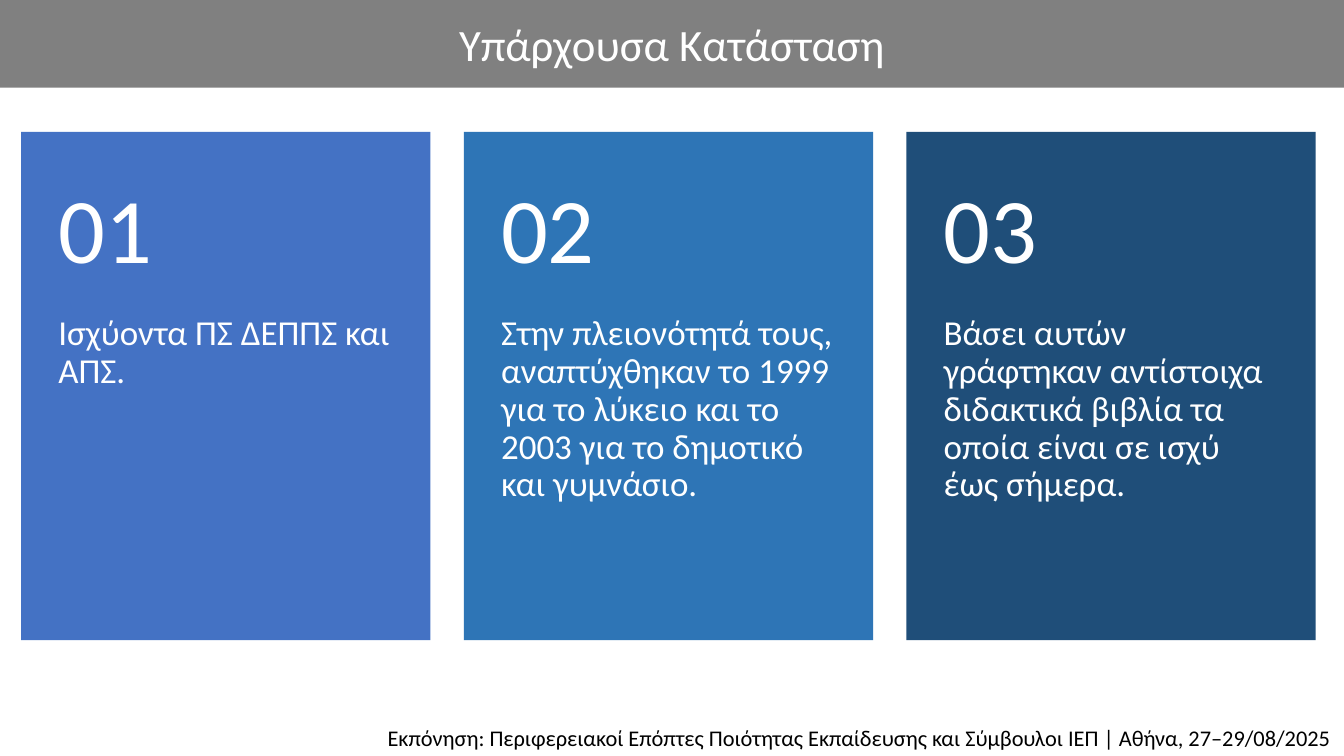
from dataclasses import dataclass

from pptx import Presentation
from pptx.dml.color import RGBColor
from pptx.enum.shapes import MSO_SHAPE as Shape
from pptx.enum.text import MSO_ANCHOR as Anchor, PP_ALIGN as Align
from pptx.util import Inches, Pt

WHITE = RGBColor(0xFF, 0xFF, 0xFF)
BLACK = RGBColor(0x00, 0x00, 0x00)
GREY = RGBColor(0x80, 0x80, 0x80)
INDIGO = RGBColor(0x44, 0x72, 0xC4)
BLUE = RGBColor(0x2E, 0x75, 0xB6)
NAVY = RGBColor(0x1F, 0x4E, 0x79)

# Card grid, in inches
LEFT, TOP, WIDTH, HEIGHT = 0.21, 1.31, 4.06, 5.04
PITCH = 4.39
HEAD = 2.02
SIDE = 0.37


@dataclass
class Box:
    left: float
    top: float
    width: float
    height: float
    text: str
    size: int
    fill: RGBColor | None = None
    color: RGBColor = WHITE
    align: Align = Align.LEFT
    anchor: Anchor = Anchor.TOP
    spacing: float = 1.0
    inset: tuple[float, float, float, float] = (0.1, 0.05, 0.1, 0.05)


@dataclass
class Card:
    text: str
    fill: RGBColor


CARDS = [
    Card("Ισχύοντα ΠΣ ΔΕΠΠΣ και ΑΠΣ.", INDIGO),
    Card("Στην πλειονότητά τους, αναπτύχθηκαν το 1999 για το λύκειο "
         "και το 2003 για το δημοτικό και γυμνάσιο.", BLUE),
    Card("Βάσει αυτών γράφτηκαν αντίστοιχα διδακτικά βιβλία τα οποία "
         "είναι σε ισχύ έως σήμερα.", NAVY),
]


def draw_box(slide, box: Box) -> None:
    place = [Inches(v) for v in (box.left, box.top, box.width, box.height)]
    if box.fill is None:
        shape = slide.shapes.add_textbox(*place)
    else:
        shape = slide.shapes.add_shape(Shape.RECTANGLE, *place)
        shape.shadow.inherit = False
        shape.fill.solid()
        shape.fill.fore_color.rgb = box.fill
        shape.line.fill.background()

    frame = shape.text_frame
    left, top, right, bottom = (Inches(v) for v in box.inset)
    layout = {"word_wrap": True, "vertical_anchor": box.anchor,
              "margin_left": left, "margin_top": top,
              "margin_right": right, "margin_bottom": bottom}
    for name, value in layout.items():
        setattr(frame, name, value)

    para = frame.paragraphs[0]
    para.alignment = box.align
    para.line_spacing = box.spacing
    run = para.add_run()
    run.text = box.text
    for name, value in {"name": "Calibri", "size": Pt(box.size)}.items():
        setattr(run.font, name, value)
    run.font.color.rgb = box.color


def draw_card(slide, index: int, card: Card) -> None:
    left = LEFT + index * PITCH
    draw_box(slide, Box(left, TOP, WIDTH, HEIGHT, card.text, 25, card.fill,
                        spacing=0.9, inset=(SIDE, 1.82, SIDE, 0.36)))
    draw_box(slide, Box(left, TOP, WIDTH, HEAD, f"{index + 1:02d}", 66,
                        anchor=Anchor.MIDDLE, spacing=0.9,
                        inset=(SIDE, 0.18, SIDE, 0.18)))


def main() -> None:
    deck = Presentation()
    deck.slide_width, deck.slide_height = Inches(13.33), Inches(7.5)
    slide = deck.slides.add_slide(deck.slide_layouts[6])

    # Numbered cards
    for index, card in enumerate(CARDS):
        draw_card(slide, index, card)

    # Title bar
    draw_box(slide, Box(0, 0, 13.33, 0.87, "Υπάρχουσα Κατάσταση", 32, GREY,
                        align=Align.CENTER, anchor=Anchor.MIDDLE))

    # Footer
    draw_box(slide, Box(0.03, 7.11, 13.27, 0.39,
                        "Εκπόνηση: Περιφερειακοί Επόπτες Ποιότητας Εκπαίδευσης "
                        "και Σύμβουλοι ΙΕΠ | Αθήνα, 27–29/08/2025",
                        16, WHITE, BLACK, Align.RIGHT, spacing=1.1))

    deck.save("out.pptx")


if __name__ == "__main__":
    main()
